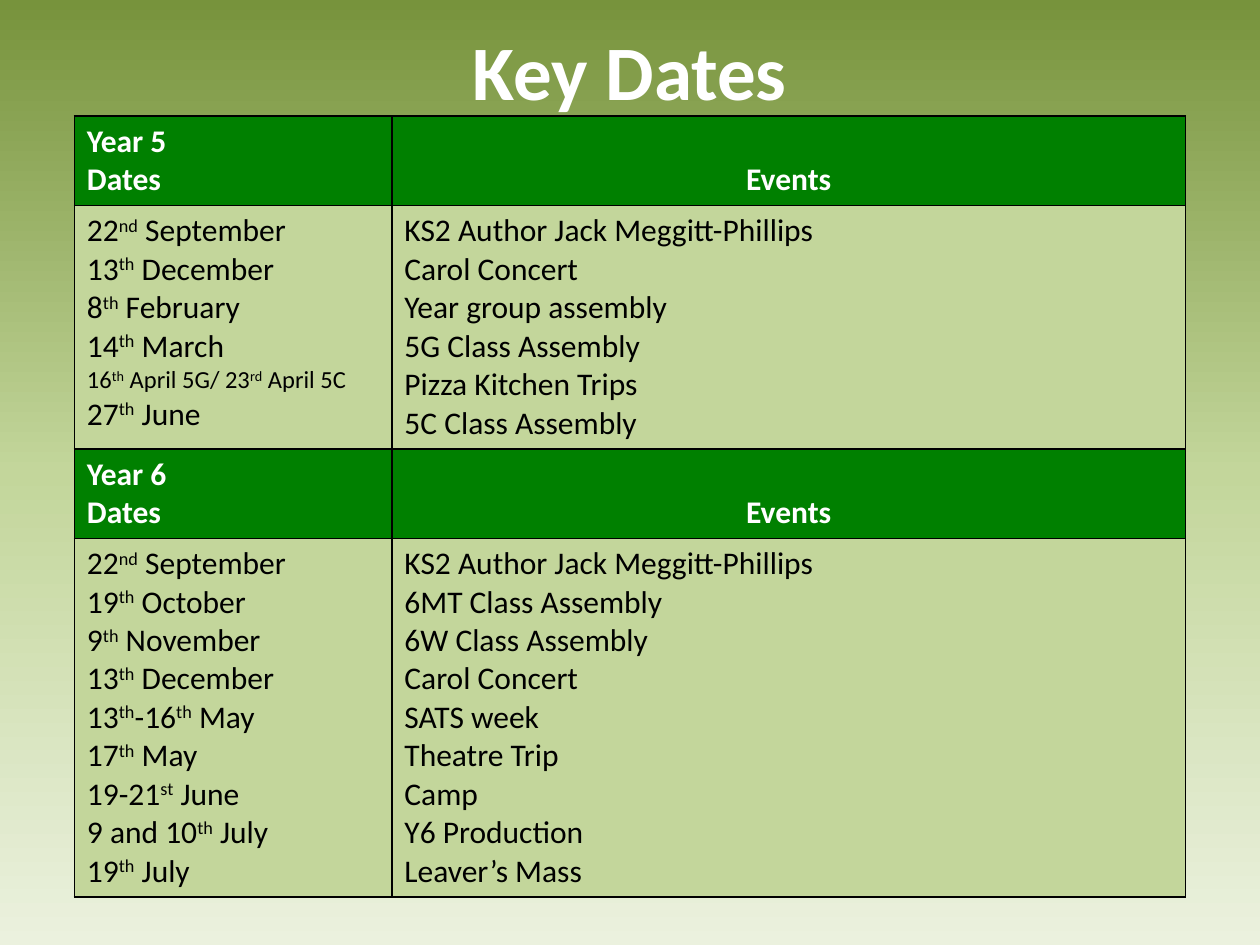
from lxml import etree
from pptx import Presentation
from pptx.dml.color import RGBColor
from pptx.enum import text
from pptx.oxml.ns import qn
from pptx.util import Inches, Pt

WHITE, BLACK, GREEN, PALE = "FFFFFF", "000000", "008000", "C3D69B"
STOPS = [(0, "77933C"), (50, PALE), (100, "EBF1DE")]
SMALL_DATE = "16^th^ April 5G/ 23^rd^ April 5C"
YEARS = [
    ("Year 5", 1.92, [
        ("22^nd^ September", "KS2 Author Jack Meggitt-Phillips"),
        ("13^th^ December", "Carol Concert"),
        ("8^th^ February", "Year group assembly"),
        ("14^th^ March", "5G Class Assembly"),
        (SMALL_DATE, "Pizza Kitchen Trips"),
        ("27^th^ June", "5C Class Assembly"),
    ]),
    ("Year 6", 2.84, [
        ("22^nd^ September", "KS2 Author Jack Meggitt-Phillips"),
        ("19^th^ October", "6MT Class Assembly"),
        ("9^th^ November", "6W Class Assembly"),
        ("13^th^ December", "Carol Concert"),
        ("13^th^-16^th^ May", "SATS week"),
        ("17^th^ May", "Theatre Trip"),
        ("19-21^st^ June", "Camp"),
        ("9 and 10^th^ July", "Y6 Production"),
        ("19^th^ July", "Leaver’s Mass"),
    ]),
]


def rgb(value):
    """Turn a hex string into a colour."""
    return RGBColor.from_string(value)


def set_background(s):
    """Fill the slide with a vertical gradient."""
    fill = s.background.fill
    fill.gradient()
    fill.gradient_angle = 270
    stops = next(s.element.iter(qn("a:gsLst")))
    for stop in list(stops):
        stops.remove(stop)
    for position, color in STOPS:
        stop = etree.SubElement(stops, qn("a:gs"), pos=str(position * 1000))
        etree.SubElement(stop, qn("a:srgbClr"), val=color)


def format_font(font, size, color, bold):
    """Apply the slide's typeface with a size, colour and weight."""
    font.name, font.size, font.bold = "Calibri", Pt(size), bold
    font.color.rgb = rgb(color)


def add_title(s, words):
    """Place the centred title."""
    sp = s.shapes.title
    sp.left, sp.top, sp.width, sp.height = map(Inches, (0.75, 0, 8.5, 1.1))
    tf = sp.text_frame
    tf.text = words
    tf.vertical_anchor = text.MSO_ANCHOR.MIDDLE
    p = tf.paragraphs[0]
    p.alignment = text.PP_ALIGN.CENTER
    format_font(p.runs[0].font, 44, WHITE, True)


def set_borders(cell):
    """Draw a thin black line on every side of a cell."""
    props = cell._tc.get_or_add_tcPr()
    for i, side in enumerate(("lnL", "lnR", "lnT", "lnB")):
        line = etree.Element(qn("a:" + side), w=str(Pt(1)))
        fill = etree.SubElement(line, qn("a:solidFill"))
        etree.SubElement(fill, qn("a:srgbClr"), val=BLACK)
        props.insert(i, line)


def fill_cell(cell, lines, fill, color, bold=False):
    """Write lines into a cell, raising the parts between carets."""
    cell.fill.solid()
    cell.fill.fore_color.rgb = rgb(fill)
    set_borders(cell)
    tf = cell.text_frame
    for i, line in enumerate(lines):
        p = tf.add_paragraph() if i else tf.paragraphs[0]
        for j, part in enumerate(line.split("^")):
            r = p.add_run()
            r.text = part
            format_font(r.font, 14 if line == SMALL_DATE else 18, color, bold)
            if j % 2:
                r._r.get_or_add_rPr().set("baseline", "30000")


def add_dates_table(s):
    """Add a heading row and a details row for each year."""
    frame = s.shapes.add_table(2 * len(YEARS), 2, Inches(0.59), Inches(0.92),
                               Inches(8.82), Inches(6.18))
    table = frame.table
    for column, width in zip(table.columns, (2.52, 6.3)):
        column.width = Inches(width)
    for i, (year, height, entries) in enumerate(YEARS):
        top, body = 2 * i, 2 * i + 1
        table.rows[top].height = Inches(0.71)
        table.rows[body].height = Inches(height)
        fill_cell(table.cell(top, 0), [year, "Dates"], GREEN, WHITE, True)
        events = table.cell(top, 1)
        fill_cell(events, ["Events"], GREEN, WHITE, True)
        events.vertical_anchor = text.MSO_ANCHOR.BOTTOM
        events.text_frame.paragraphs[0].alignment = text.PP_ALIGN.CENTER
        for column, lines in enumerate(zip(*entries)):
            fill_cell(table.cell(body, column), lines, PALE, BLACK)


def main():
    """Build and save the key dates slide."""
    prs = Presentation()
    prs.slide_width, prs.slide_height = Inches(10), Inches(7.5)
    s = prs.slides.add_slide(prs.slide_layouts[5])
    set_background(s)
    add_title(s, "Key Dates")
    add_dates_table(s)
    prs.save("out.pptx")


if __name__ == "__main__":
    main()
